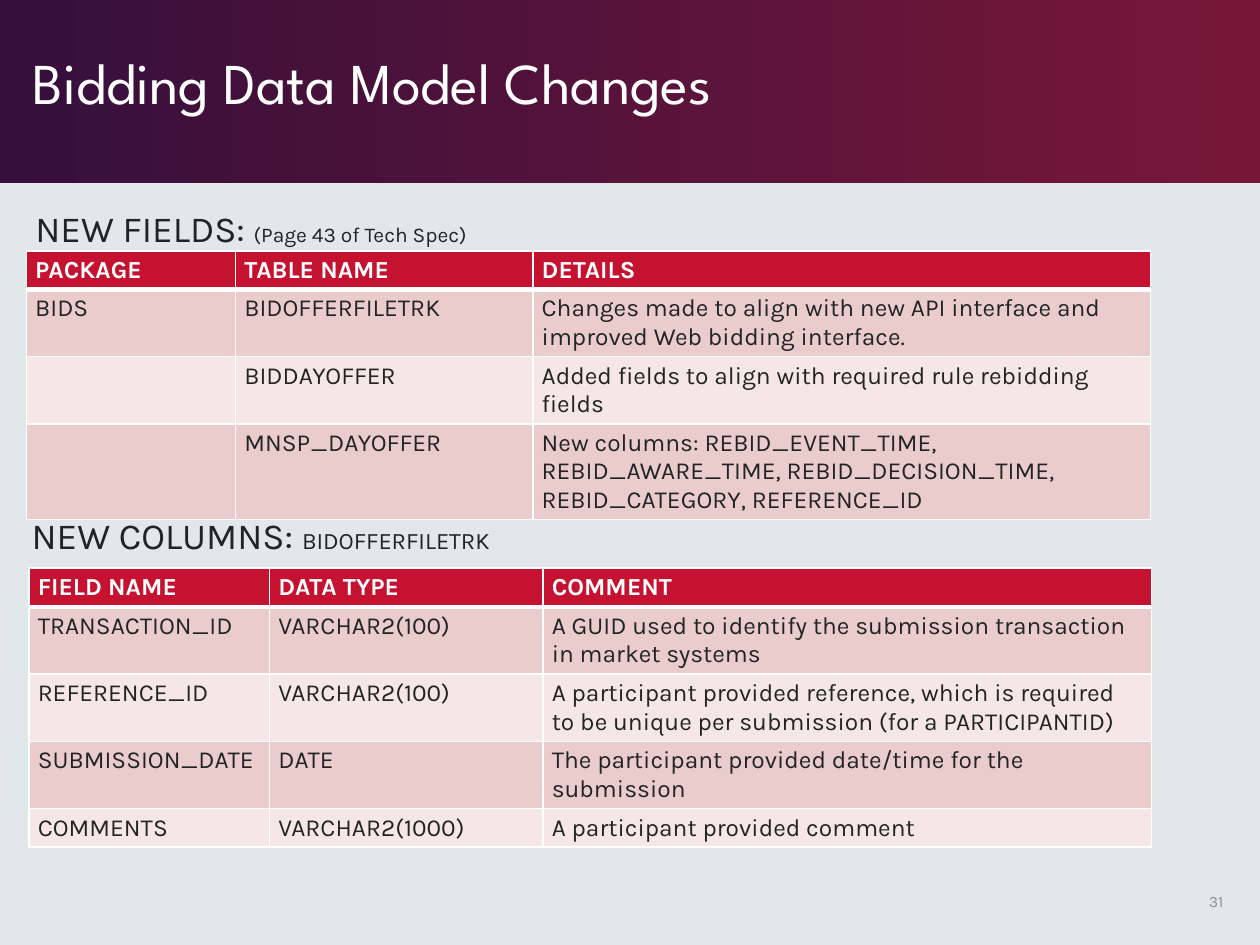
from dataclasses import dataclass

from lxml.etree import SubElement
from pptx import Presentation
from pptx.dml.color import RGBColor
from pptx.enum.shapes import MSO_SHAPE as Shape
from pptx.enum.text import MSO_ANCHOR as Anchor, MSO_AUTO_SIZE as AutoSize, PP_ALIGN as Align
from pptx.oxml.ns import qn
from pptx.util import Inches, Pt

CELL = Inches(0.1)  # the page is a grid of 100 columns by 75 rows
COLUMNS, ROWS = 100, 75


@dataclass(frozen=True)
class Theme:
    page: str = "E0E8EA"
    band_start: str = "360F3C"
    band_end: str = "771738"
    white: str = "FFFFFF"
    ink: str = "222324"
    muted: str = "8D8D8E"
    header: str = "C41230"
    stripes: tuple = ("EACCCD", "F5E7E8")
    title_font: str = "League Spartan"
    body_font: str = "Karla"
    title_size: float = 33
    heading_size: float = 21
    table_size: float = 14
    number_size: float = 9
    rule: float = 1
    header_rule: float = 3


@dataclass(frozen=True)
class Box:
    left: float
    top: float
    width: float
    height: float

    def lengths(self):
        return [round(n * CELL) for n in (self.left, self.top, self.width, self.height)]


THEME = Theme()


def set_all(target, values):
    for name, value in values.items():
        setattr(target, name, value)


def format_font(font, size, color, name=THEME.body_font, bold=False):
    set_all(font, {"name": name, "size": Pt(size), "bold": bold})
    font.color.rgb = RGBColor.from_string(color)


def format_frame(frame, anchor=Anchor.TOP, side=0.07):
    set_all(frame, {
        "word_wrap": True, "auto_size": AutoSize.NONE, "vertical_anchor": anchor,
        "margin_left": Inches(side), "margin_right": Inches(side),
        "margin_top": Inches(0.04), "margin_bottom": Inches(0.04),
    })


def add_title_band(page, box, text):
    band = page.shapes.add_shape(Shape.RECTANGLE, *box.lengths())
    band.shadow.inherit = False
    band.line.fill.background()
    band.fill.gradient()
    band.fill.gradient_angle = 0
    stops = ((0, THEME.band_start), (0.99, THEME.band_end))
    for stop, (position, color) in zip(band.fill.gradient_stops, stops):
        stop.position = position
        stop.color.rgb = RGBColor.from_string(color)
    page.shapes._spTree.insert(2, band._element)  # behind the title

    title = page.shapes.title
    place = Box(box.left + 1.9, box.top + 3.2, 73.8, 6.5)
    set_all(title, dict(zip(("left", "top", "width", "height"), place.lengths())))
    format_frame(title.text_frame, Anchor.BOTTOM)
    title.text_frame.text = text
    para = title.text_frame.paragraphs[0]
    set_all(para, {"alignment": Align.LEFT, "line_spacing": 0.9})
    format_font(para.runs[0].font, THEME.title_size, THEME.white, THEME.title_font)


def add_heading(page, box, label, detail, detail_size, side):
    frame = page.shapes.add_textbox(*box.lengths()).text_frame
    format_frame(frame, side=side)
    para = frame.paragraphs[0]
    para.line_spacing = 0.9
    for text, size in ((label, THEME.heading_size), (detail, detail_size)):
        span = para.add_run()
        span.text = text
        format_font(span.font, size, THEME.ink)


def set_borders(cell, weights):
    properties = cell._tc.get_or_add_tcPr()
    for side, weight in weights.items():
        line = SubElement(properties, qn(f"a:ln{side}"), w=str(Pt(weight)))
        SubElement(SubElement(line, qn("a:solidFill")), qn("a:srgbClr"), val=THEME.white)


def format_cell(cell, row, text):
    is_header = row == 0
    set_borders(cell, {
        "L": THEME.rule, "R": THEME.rule,
        "T": THEME.header_rule if row == 1 else THEME.rule,
        "B": THEME.header_rule if is_header else THEME.rule,
    })
    cell.fill.solid()
    fill = THEME.header if is_header else THEME.stripes[(row - 1) % 2]
    cell.fill.fore_color.rgb = RGBColor.from_string(fill)
    set_all(cell, {
        "margin_left": Inches(0.07), "margin_right": Inches(0.07),
        "margin_top": Inches(0.04), "margin_bottom": Inches(0.04),
    })
    cell.text = text
    color = THEME.white if is_header else THEME.ink
    format_font(cell.text_frame.paragraphs[0].font, THEME.table_size, color, bold=is_header)


def add_field_table(page, left, top, widths, lines, records):
    """Draw records as a striped table; lines holds the text lines of each row."""
    heights = [3 + 2.29 * (count - 1) for count in lines]
    box = Box(left, top, sum(widths), sum(heights))
    table = page.shapes.add_table(len(records), len(widths), *box.lengths()).table
    for column, width in zip(table.columns, widths):
        column.width = round(width * CELL)
    for row, (record, height) in enumerate(zip(records, heights)):
        table.rows[row].height = round(height * CELL)
        for column, text in enumerate(record):
            format_cell(table.cell(row, column), row, text)


def add_page_number(page, box, number):
    frame = page.shapes.add_textbox(*box.lengths()).text_frame
    format_frame(frame, Anchor.MIDDLE)
    para = frame.paragraphs[0]
    para.text = str(number)
    para.alignment = Align.RIGHT
    format_font(para.runs[0].font, THEME.number_size, THEME.muted)


NEW_FIELDS = [
    ("PACKAGE", "TABLE NAME", "DETAILS"),
    ("BIDS", "BIDOFFERFILETRK",
     "Changes made to align with new API interface and improved Web bidding interface."),
    ("", "BIDDAYOFFER", "Added fields to align with required rule rebidding fields"),
    ("", "MNSP_DAYOFFER",
     "New columns: REBID_EVENT_TIME, REBID_AWARE_TIME, REBID_DECISION_TIME, "
     "REBID_CATEGORY, REFERENCE_ID"),
]
NEW_COLUMNS = [
    ("FIELD NAME", "DATA TYPE", "COMMENT"),
    ("TRANSACTION_ID", "VARCHAR2(100)",
     "A GUID used to identify the submission transaction in market systems"),
    ("REFERENCE_ID", "VARCHAR2(100)",
     "A participant provided reference, which is required to be unique per submission "
     "(for a PARTICIPANTID)"),
    ("SUBMISSION_DATE", "DATE", "The participant provided date/time for the submission"),
    ("COMMENTS", "VARCHAR2(1000)", "A participant provided comment"),
]


def main():
    deck = Presentation()
    set_all(deck, {"slide_width": COLUMNS * CELL, "slide_height": ROWS * CELL})
    page = deck.slides.add_slide(deck.slide_layouts[5])
    page.background.fill.solid()
    page.background.fill.fore_color.rgb = RGBColor.from_string(THEME.page)

    add_title_band(page, Box(0, 0, COLUMNS, 14.5), "Bidding Data Model Changes")
    add_heading(page, Box(1.9, 16.3, 95.9, 3.6), "NEW FIELDS: ",
                "(Page 43 of Tech Spec)", 12, 0.09)
    add_field_table(page, 2.1, 19.9, (16.6, 23.6, 49), (1, 2, 2, 3), NEW_FIELDS)
    add_heading(page, Box(1.8, 40.7, 95.9, 3.6), "NEW COLUMNS: ",
                "BIDOFFERFILETRK", 13.5, 0.07)
    add_field_table(page, 2.3, 45.1, (19.1, 21.7, 48.3), (1, 2, 2, 2, 1), NEW_COLUMNS)
    add_page_number(page, Box(93.1, 69.5, 4.7, 4), 31)
    deck.save("out.pptx")


if __name__ == "__main__":
    main()
